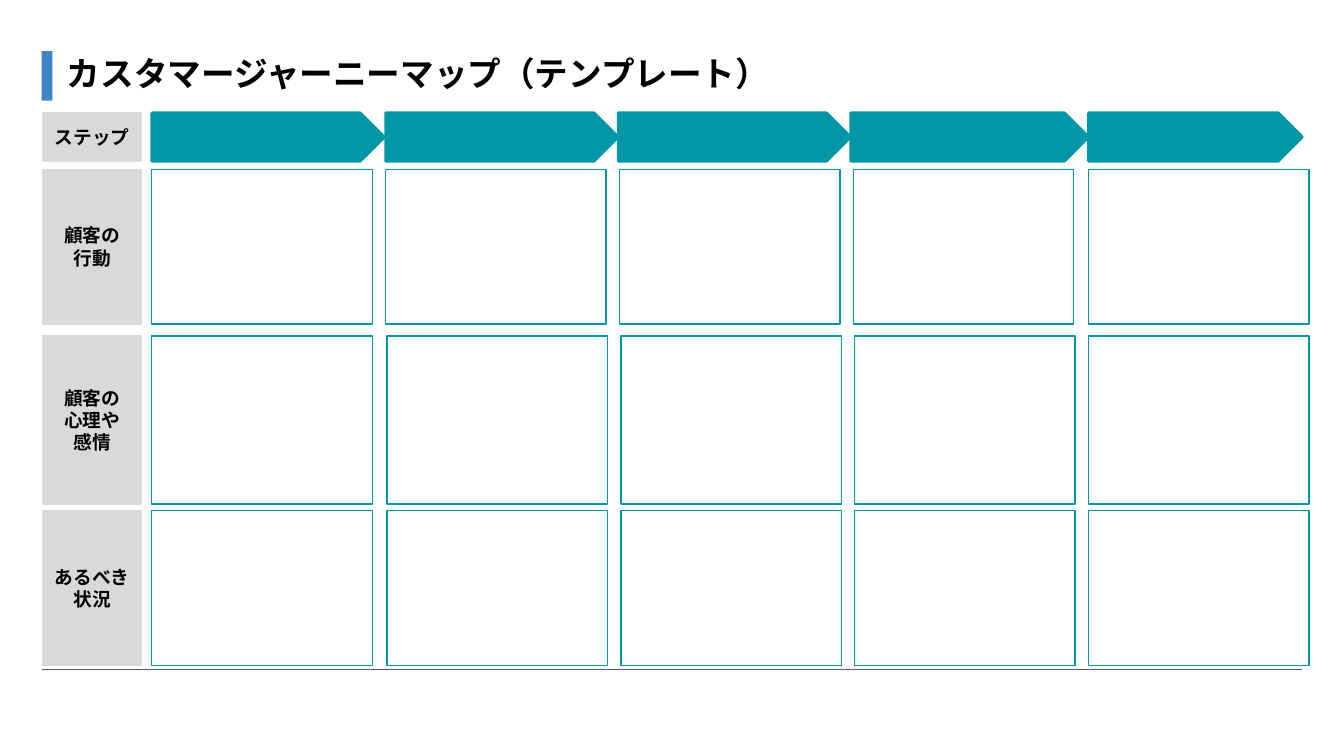
"""Build a customer journey map template slide."""
from lxml import etree
from pptx import Presentation
from pptx.dml.color import RGBColor
from pptx.enum.shapes import MSO_CONNECTOR as Link, MSO_SHAPE as Kind
from pptx.enum.text import MSO_ANCHOR as Anchor, PP_ALIGN as Align
from pptx.oxml.ns import qn
from pptx.util import Inches, Pt

HUES = {"bar": "3D85C6", "rule": "595959", "teal": "0097A7",
        "grey": "D9D9D9", "ink": "000000"}


def draw(kind, left, top, width, height, fill=None, line=None, weight=0.75):
    shape = slide.shapes.add_shape(
        kind, Inches(left), Inches(top), Inches(width), Inches(height))
    shape.shadow.inherit = False
    if fill:
        shape.fill.solid()
        shape.fill.fore_color.rgb = RGBColor.from_string(HUES[fill])
    else:
        shape.fill.background()
    if line:
        shape.line.color.rgb = RGBColor.from_string(HUES[line])
        shape.line.width = Pt(weight)
    else:
        shape.line.fill.background()
    return shape


def write(shape, text, size, align, side):
    frame = shape.text_frame
    frame.word_wrap = True
    frame.vertical_anchor = Anchor.MIDDLE
    frame.margin_left = frame.margin_right = Inches(side)
    frame.margin_top = frame.margin_bottom = Inches(0.1)
    frame.text = text
    for para in frame.paragraphs:
        para.alignment = align
        font = para.runs[0].font
        font.name, font.size, font.bold = "Arial", Pt(size), True
        font.color.rgb = RGBColor.from_string(HUES["ink"])


deck = Presentation()
deck.slide_width = Inches(10)
deck.slide_height = deck.slide_width * 9 // 16
slide = deck.slides.add_slide(deck.slide_layouts[6])

draw(Kind.RECTANGLE, 0.31, 0.38, 0.08, 0.37, "bar")
rule = slide.shapes.add_connector(
    Link.STRAIGHT, Inches(0.31), Inches(4.98), Inches(9.69), Inches(4.98))
rule.line.color.rgb = RGBColor.from_string(HUES["rule"])
rule.line.width = Pt(0.75)
etree.SubElement(rule._element.spPr, qn("a:effectLst"))

title = slide.shapes.add_textbox(
    Inches(0.4), Inches(0.29), Inches(9.3), Inches(0.5))
write(title, "カスタマージャーニーマップ（テンプレート）", 18, Align.LEFT, 0.1)

rows = [("ステップ", 0.84, 0.36, []),
        ("顧客の\n行動", 1.26, 1.15, [1.13, 2.87, 4.61, 6.35, 8.1]),
        ("顧客の\n心理や\n感情", 2.5, 1.25, [1.13, 2.88, 4.62, 6.36, 8.1]),
        ("あるべき状況", 3.8, 1.15, [1.13, 2.88, 4.62, 6.36, 8.1])]
for label, top, height, cols in rows:
    for left in cols:
        draw(Kind.RECTANGLE, left, top, 1.64, height, line="teal")
    head = draw(Kind.RECTANGLE, 0.32, top, 0.73, height, "grey", "grey")
    write(head, label, 10, Align.CENTER, 0.06)

steps = [(1.13, 1.73), (2.87, 1.73), (4.6, 1.73), (6.33, 1.77), (8.1, 1.59)]
for left, width in steps:
    draw(Kind.PENTAGON, left, 0.84, width, 0.36, "teal", "teal", 1.5)

deck.save("out.pptx")
